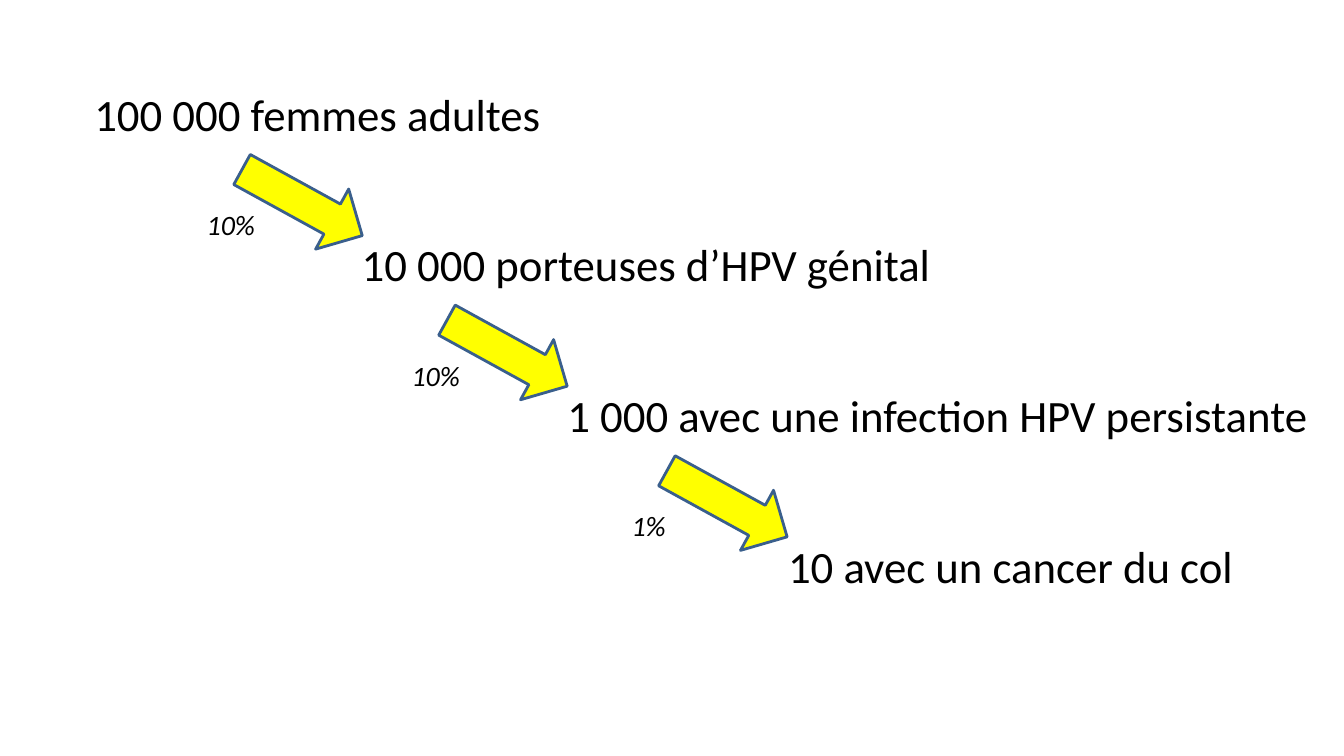
from dataclasses import dataclass

from pptx import Presentation
from pptx.dml.color import RGBColor
from pptx.enum.shapes import MSO_SHAPE
from pptx.enum.text import MSO_AUTO_SIZE, PP_ALIGN
from pptx.slide import Slide
from pptx.util import Pt

FIRST_STAGE_TOP = 58.2
STAGE_STEP = 107.6
ARROW_DROP = 62
RATE_DROP = 86.5
RATE_OFFSET = -26.3


@dataclass(frozen=True)
class Stage:
    text: str
    left: float
    width: float
    align: PP_ALIGN = PP_ALIGN.LEFT


@dataclass(frozen=True)
class Transition:
    rate: str
    arrow_left: float


STAGES = [
    Stage("100 000 femmes adultes", 41.8, 370, PP_ALIGN.CENTER),
    Stage("10 000 porteuses d’HPV génital", 251.3, 436.3),
    Stage("1 000 avec une infection HPV persistante", 398.2, 566.6),
    Stage("10 avec un cancer du col", 555.8, 370),
]
TRANSITIONS = [
    Transition("10%", 166.8),
    Transition("10%", 313.2),
    Transition("1%", 470.3),
]


def color(hex_code: str) -> RGBColor:
    return RGBColor.from_string(hex_code)


def add_label(slide: Slide, text: str, left: float, top: float, width: float,
              height: float, size: float, align: PP_ALIGN = PP_ALIGN.LEFT,
              italic: bool = False) -> None:
    frame = slide.shapes.add_textbox(Pt(left), Pt(top), Pt(width), Pt(height)).text_frame
    frame.word_wrap = True
    frame.auto_size = MSO_AUTO_SIZE.SHAPE_TO_FIT_TEXT
    paragraph = frame.paragraphs[0]
    paragraph.text = text
    paragraph.alignment = align
    font = paragraph.font
    font.name = "Calibri"
    font.size = Pt(size)
    font.italic = italic
    font.color.rgb = color("000000")


def add_arrow(slide: Slide, left: float, top: float) -> None:
    arrow = slide.shapes.add_shape(
        MSO_SHAPE.RIGHT_ARROW, Pt(left), Pt(top), Pt(98), Pt(49))
    arrow.rotation = 28.8
    arrow.shadow.inherit = False
    arrow.fill.solid()
    arrow.fill.fore_color.rgb = color("FFFF00")
    arrow.line.color.rgb = color("3A5F8C")
    arrow.line.width = Pt(2)


def main() -> None:
    presentation = Presentation()
    presentation.slide_width = Pt(960)
    presentation.slide_height = Pt(540)
    slide = presentation.slides.add_slide(presentation.slide_layouts[6])

    stage_tops = [FIRST_STAGE_TOP + STAGE_STEP * i for i in range(len(STAGES))]
    for stage, top in zip(STAGES, stage_tops):
        add_label(slide, stage.text, stage.left, top, stage.width, 46, 32, stage.align)
    for transition, top in zip(TRANSITIONS, stage_tops):
        add_arrow(slide, transition.arrow_left, top + ARROW_DROP)
        add_label(slide, transition.rate, transition.arrow_left + RATE_OFFSET,
                  top + RATE_DROP, 57, 31.5, 20, italic=True)

    presentation.save("out.pptx")


if __name__ == "__main__":
    main()
